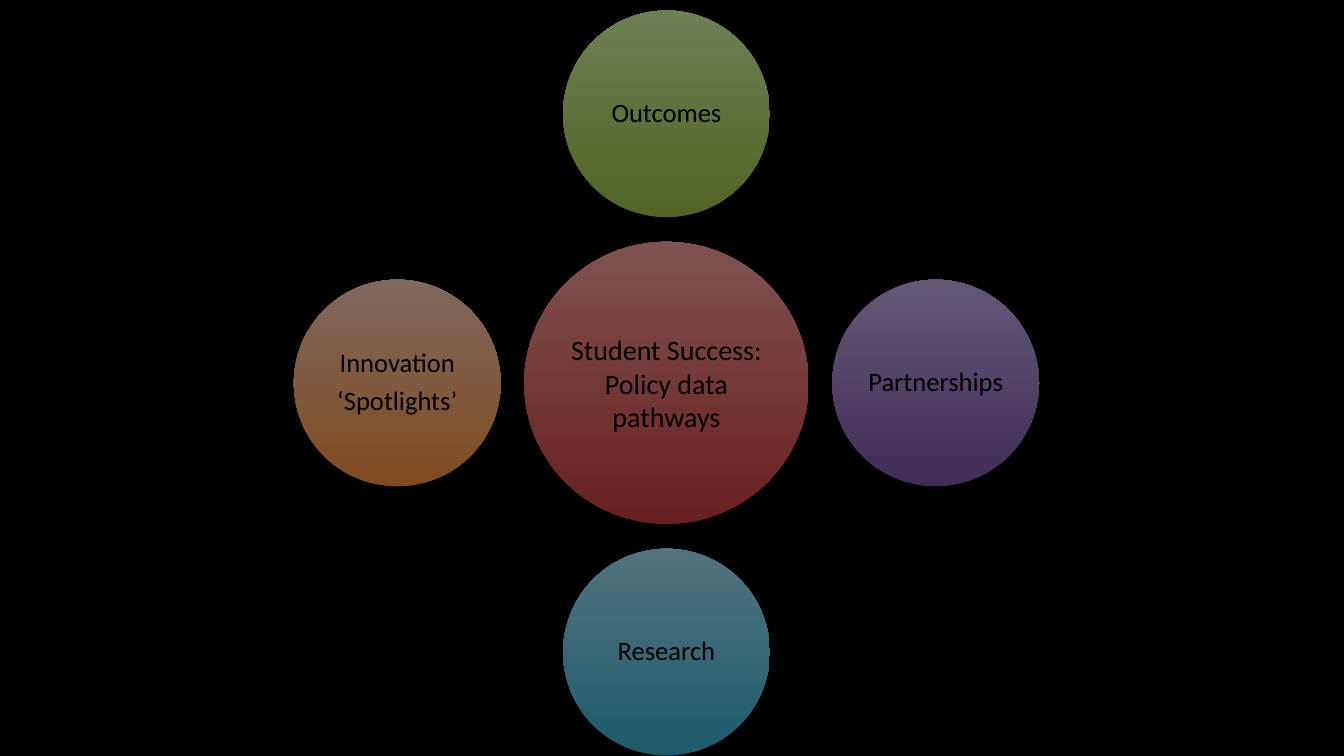
from dataclasses import dataclass

from pptx import Presentation
from pptx.dml.color import RGBColor
from pptx.enum.shapes import MSO_SHAPE
from pptx.enum.text import MSO_ANCHOR, PP_ALIGN
from pptx.oxml.ns import qn
from pptx.slide import Slide
from pptx.util import Inches, Pt
from lxml.etree import SubElement

# Gradients run from the bottom colour to the top colour
COLORS = {
    "black": "000000",
    "red": ("D1403C", "FFA6A5"),
    "green": ("A0CA4A", "DAFFA5"),
    "purple": ("7F5BAB", "C8B0ED"),
    "blue": ("39B7D8", "A7E6FF"),
    "orange": ("FF953E", "FFD2BD"),
}
HUB_X, HUB_Y = 6.61, 3.8
ORBIT = 2.67
OPACITY = "50000"


@dataclass
class Circle:
    lines: list[str]
    color: str
    dx: int = 0  # steps from the hub, in orbit radii
    dy: int = 0
    width: float = 2.05
    height: float = 2.05
    size: float = 19
    line_spacing: float = 0.9
    space_after: float = 6.65


CIRCLES = [
    Circle(["Student Success: Policy data pathways"], "red", width=2.82,
           height=2.8, size=20, line_spacing=1.0, space_after=0),
    Circle(["Outcomes"], "green", dy=-1),
    Circle(["Partnerships"], "purple", dx=1),
    Circle(["Research"], "blue", dy=1),
    Circle(["Innovation", "‘Spotlights’"], "orange", dx=-1),
]


def add_circle(slide: Slide, circle: Circle) -> None:
    sp = slide.shapes.add_shape(
        MSO_SHAPE.OVAL,
        Inches(HUB_X + circle.dx * ORBIT - circle.width / 2),
        Inches(HUB_Y + circle.dy * ORBIT - circle.height / 2),
        Inches(circle.width), Inches(circle.height))
    sp.shadow.inherit = False
    sp.line.fill.background()

    # Half-transparent vertical gradient
    sp.fill.gradient()
    sp.fill.gradient_angle = 90
    for stop, color in zip(sp.fill.gradient_stops, COLORS[circle.color]):
        stop.color.rgb = RGBColor.from_string(color)
    for clr in sp._element.spPr.iter(qn("a:srgbClr")):
        SubElement(clr, qn("a:alpha")).set("val", OPACITY)

    # Label
    tf = sp.text_frame
    tf.word_wrap = True
    tf.vertical_anchor = MSO_ANCHOR.MIDDLE
    tf.margin_left = tf.margin_right = Inches(0.03)
    tf.margin_top = tf.margin_bottom = Inches(0.03)
    tf.text = "\n".join(circle.lines)
    for p in tf.paragraphs:
        p.alignment = PP_ALIGN.CENTER
        p.line_spacing = circle.line_spacing
        p.space_after = Pt(circle.space_after)
        p.font.name = "Calibri"
        p.font.size = Pt(circle.size)
        p.font.color.rgb = RGBColor.from_string(COLORS["black"])


def main() -> None:
    prs = Presentation()
    prs.slide_width, prs.slide_height = Inches(13.33), Inches(7.5)
    slide = prs.slides.add_slide(prs.slide_layouts[6])

    # Background
    fill = slide.background.fill
    fill.solid()
    fill.fore_color.rgb = RGBColor.from_string(COLORS["black"])

    # Hub and its four satellites
    for circle in CIRCLES:
        add_circle(slide, circle)
    prs.save("out.pptx")


if __name__ == "__main__":
    main()
